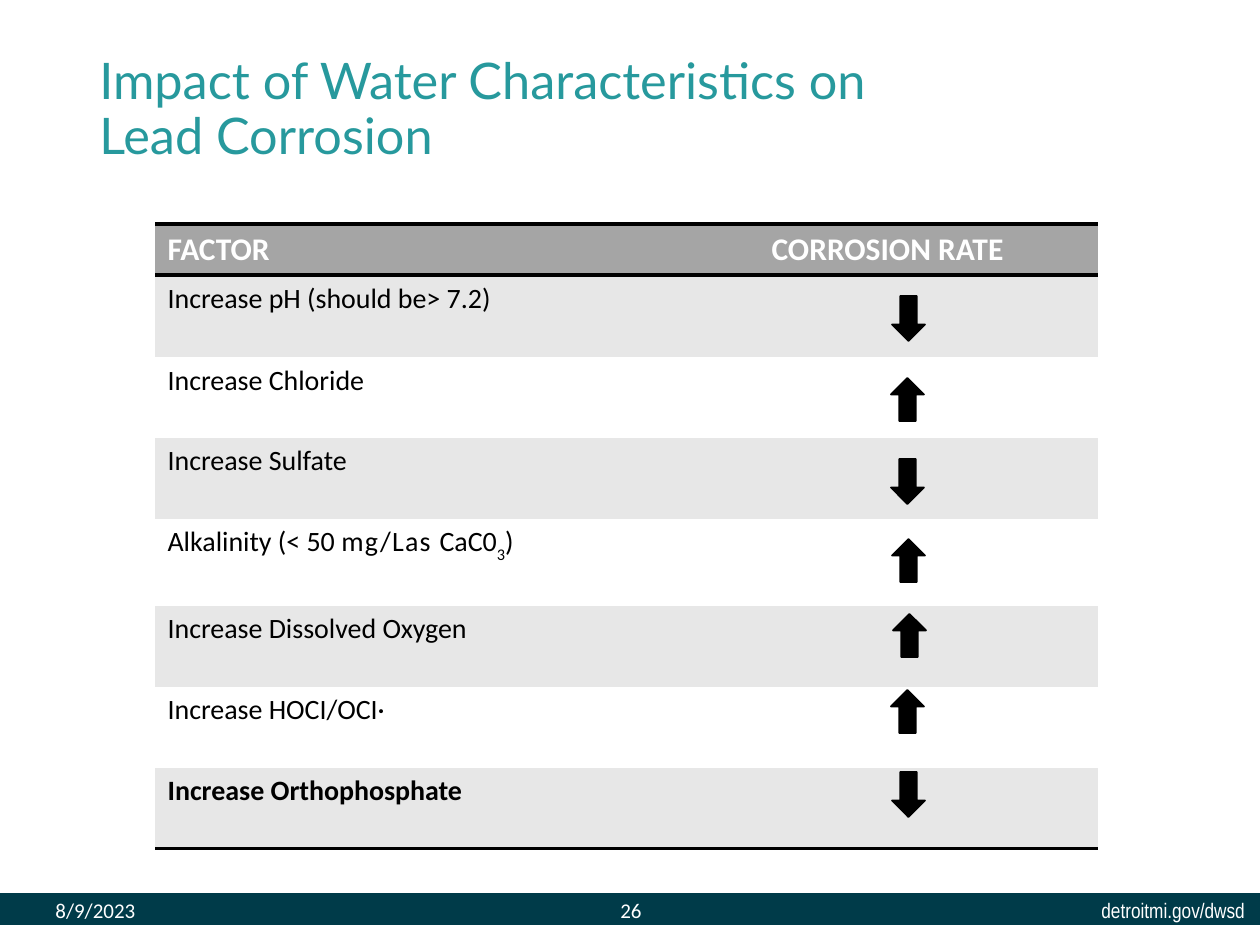
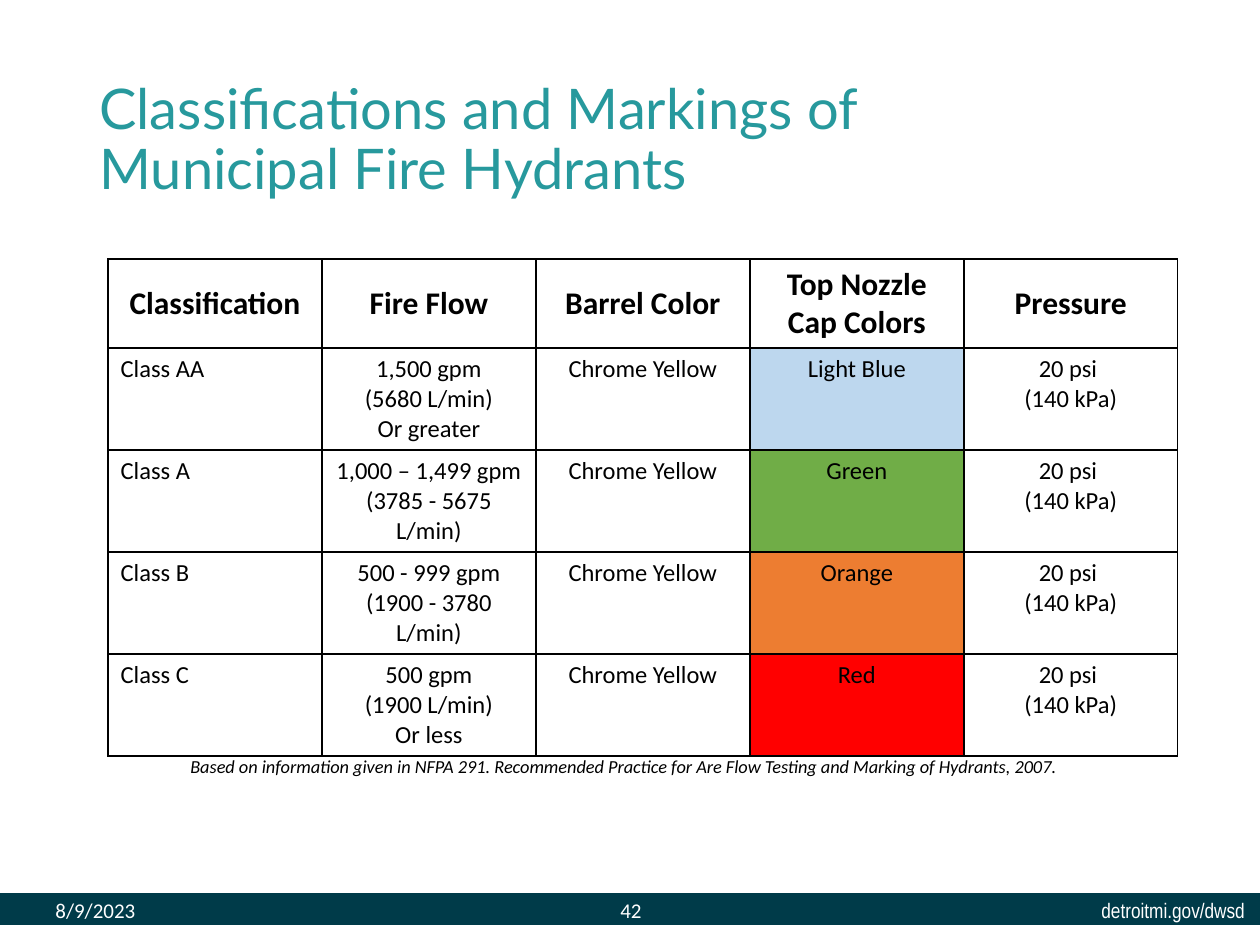
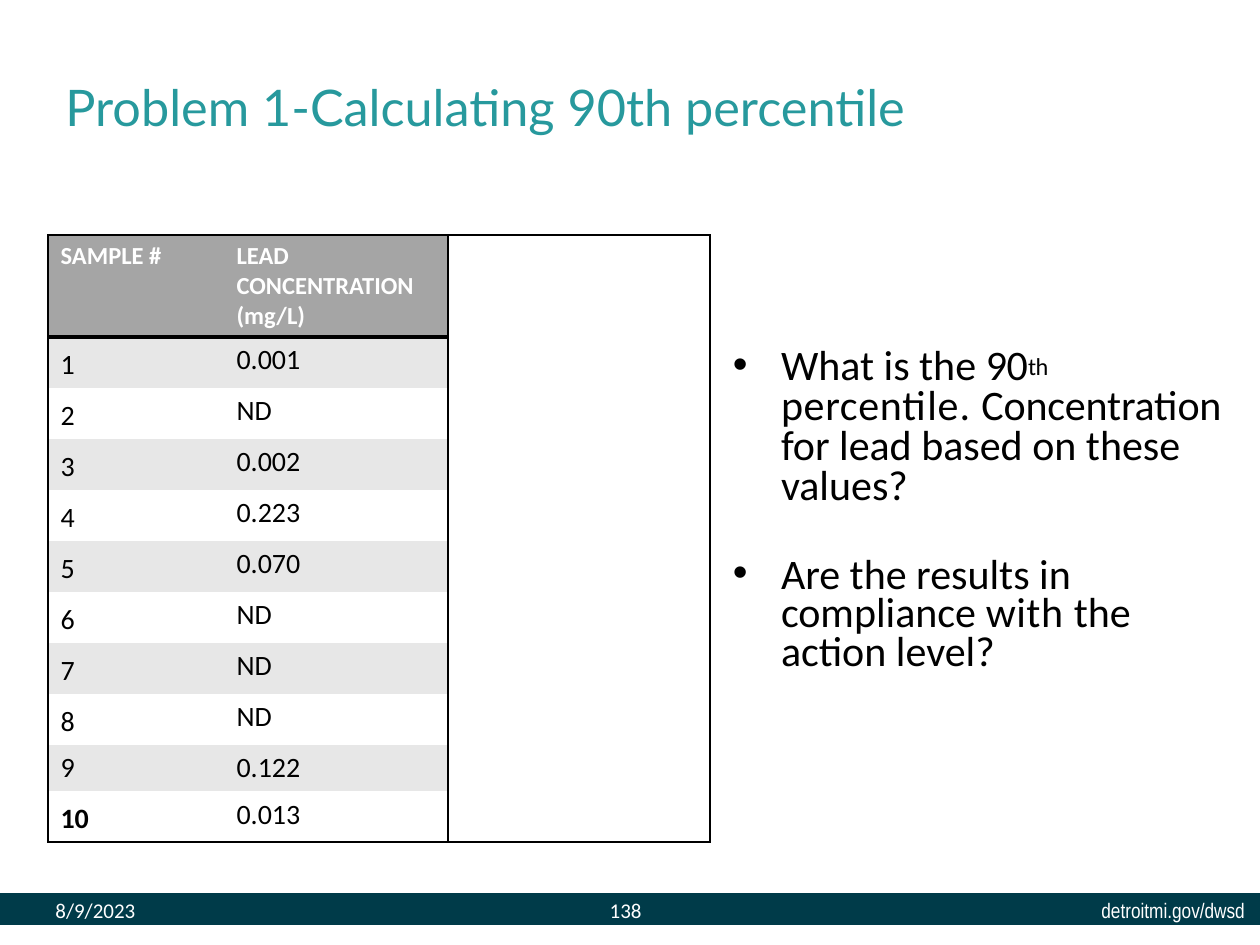
"""Build three water utility training slides with a shared title style and footer."""
import lxml.etree
import pptx
import pptx.dml.color
import pptx.enum.shapes
import pptx.enum.text
import pptx.oxml.ns
import pptx.util

RGB = pptx.dml.color.RGBColor
TEAL = RGB(0x27, 0x99, 0x9D)
NAVY = RGB(0x00, 0x3B, 0x49)
WHITE = RGB(0xFF, 0xFF, 0xFF)
BLACK = RGB(0x00, 0x00, 0x00)
GRAY = RGB(0xA5, 0xA5, 0xA5)
PALE = RGB(0xE7, 0xE7, 0xE7)
BLUE = RGB(0xBD, 0xD7, 0xEE)
GREEN = RGB(0x70, 0xAD, 0x47)
AMBER = RGB(0xED, 0x7D, 0x31)
RED = RGB(0xFF, 0x00, 0x00)

SCALE = 914400 / 126
PLAIN = "{2D5ABB26-0587-4C30-8999-92F81FD0307C}"
SHAPE = pptx.enum.shapes.MSO_SHAPE
TOP = pptx.enum.text.MSO_ANCHOR.TOP
MID = pptx.enum.text.MSO_ANCHOR.MIDDLE
LOW = pptx.enum.text.MSO_ANCHOR.BOTTOM
LEFT = pptx.enum.text.PP_ALIGN.LEFT
MIDST = pptx.enum.text.PP_ALIGN.CENTER
RIGHT = pptx.enum.text.PP_ALIGN.RIGHT

FACTORS = [
    "Increase pH (should be> 7.2)",
    "Increase Chloride",
    "Increase Sulfate",
    ["Alkalinity (< 50 ", ("mg/Las ", 70, 0), "CaC0", ("3", 0, -30000), ")"],
    "Increase Dissolved Oxygen",
    "Increase HOCI/OCI·",
    "Increase Orthophosphate",
]
ARROWS = [
    ("down", 892, 296), ("up", 891, 378), ("down", 891, 459), ("up", 892, 539),
    ("up", 893, 614), ("up", 891, 690), ("down", 892, 772),
]
HEADS = ["Classification", "Fire Flow", "Barrel Color", "Top Nozzle Cap Colors", "Pressure"]
CLASSES = [
    ("Class AA", "1,500 gpm\n(5680 L/min)\nOr greater", "Light Blue", BLUE),
    ("Class A", "1,000 – 1,499 gpm\n(3785 - 5675 L/min)", "Green", GREEN),
    ("Class B", "500 - 999 gpm\n(1900 - 3780 L/min)", "Orange", AMBER),
    ("Class C", "500 gpm\n(1900 L/min)\nOr less", "Red", RED),
]
LEVELS = ["0.001", "ND", "0.002", "0.223", "0.070", "ND", "ND", "ND", "0.122", "0.013"]
ASK = [
    "What is the ", ("90", -20, 0), ("th ", -30, 12000), ("percentile", 40, 0),
    (". ", 50, 0), ("Concentration ", -10, 0), "for lead based on these values?",
]
CHECK = ["Are the results in compliance ", ("with ", 30, 0), "the action level?"]


def px(num):
    """Turn px into EMU."""
    return round(num * SCALE)


def style(par, size, color=BLACK, font="Calibri", bold=False, slant=False):
    """Set the font of a whole paragraph."""
    face = par.font
    face.name, face.size, face.bold, face.italic = font, pptx.util.Pt(size), bold, slant
    face.color.rgb = color


def write(par, parts):
    """Fill a paragraph from text or from parts with tracking and baseline."""
    if isinstance(parts, str):
        par.text = parts
        return
    for part in parts:
        text, track, base = (part, 0, 0) if isinstance(part, str) else part
        run = par.add_run()
        run.text = text
        props = run._r.get_or_add_rPr()
        if track:
            props.set("spc", str(track))
        if base:
            props.set("baseline", str(base))


def label(slide, box, text, size, color=BLACK, font="Calibri", align=LEFT,
          anchor=TOP, space=None, slant=False, wrap=True):
    """Add a text box with one paragraph."""
    frame = slide.shapes.add_textbox(*map(px, box)).text_frame
    frame.word_wrap = wrap
    frame.vertical_anchor = anchor
    par = frame.paragraphs[0]
    par.text = text
    par.alignment = align
    par.line_spacing = space
    style(par, size, color, font, slant=slant)


def title(slide, box, text, size, anchor=TOP):
    """Add the slide title."""
    label(slide, box, text, size, TEAL, "Lato", anchor=anchor, space=0.9)


def shape(slide, kind, box, color):
    """Add a filled preset shape without an outline."""
    item = slide.shapes.add_shape(kind, *map(px, box))
    item.shadow.inherit = False
    item.fill.solid()
    item.fill.fore_color.rgb = color
    item.line.fill.background()
    return item


def arrow(slide, way, left, top):
    """Add a black block arrow pointing up or down."""
    kind, tall = (SHAPE.UP_ARROW, 43) if way == "up" else (SHAPE.DOWN_ARROW, 45)
    item = shape(slide, kind, (left, top, 33, tall), BLACK)
    item.line.color.rgb = BLACK
    item.line.width = pptx.util.Pt(1)


def page(deck, number):
    """Add a blank slide with the footer band."""
    slide = deck.slides.add_slide(deck.slide_layouts[6])
    shape(slide, SHAPE.RECTANGLE, (0, 893, 1260, 32), NAVY)
    label(slide, (1089, 891, 170, 38), "detroitmi.gov/dwsd", 12, WHITE, "Arial Narrow", wrap=False)
    label(slide, (43, 885, 284, 50), "8/9/2023", 12, WHITE, anchor=MID)
    label(slide, (370, 885, 284, 50), number, 12, WHITE, align=RIGHT, anchor=MID)
    return slide


def grid(slide, left, top, cols, rows):
    """Add an unstyled table with the given column widths and row heights."""
    frame = slide.shapes.add_table(
        len(rows), len(cols), px(left), px(top), px(sum(cols)), px(sum(rows)))
    table = frame.table
    table.first_row = table.horz_banding = False
    table._tbl.tblPr.find(pptx.oxml.ns.qn("a:tableStyleId")).text = PLAIN
    for col, wide in zip(table.columns, cols):
        col.width = px(wide)
    for row, tall in zip(table.rows, rows):
        row.height = px(tall)
    return table


def edge(cell, sides):
    """Draw black borders from a map of side letter to points."""
    props = cell._tc.get_or_add_tcPr()
    for side in "LRTB":
        if side in sides:
            line = lxml.etree.SubElement(props, pptx.oxml.ns.qn("a:ln" + side))
            line.set("w", str(pptx.util.Pt(sides[side])))
            paint = lxml.etree.SubElement(line, pptx.oxml.ns.qn("a:solidFill"))
            tint = lxml.etree.SubElement(paint, pptx.oxml.ns.qn("a:srgbClr"))
            tint.set("val", str(BLACK))


def put(cell, text="", size=16, color=BLACK, back=None, sides={}, align=LEFT,
        anchor=TOP, bold=False):
    """Set a table cell's borders, fill and text."""
    edge(cell, sides)
    if back is None:
        cell.fill.background()
    else:
        cell.fill.solid()
        cell.fill.fore_color.rgb = back
    cell.vertical_anchor = anchor
    if not text:
        cell.margin_top = cell.margin_bottom = 0
        return
    lines = text.split("\n") if isinstance(text, str) else [text]
    frame = cell.text_frame
    for pos, line in enumerate(lines):
        par = frame.add_paragraph() if pos else frame.paragraphs[0]
        write(par, line)
        par.alignment = align
        style(par, size, color, bold=bold)


def bullet(par, parts, space, before=0):
    """Fill a bulleted paragraph with a hanging indent."""
    props = par._p.get_or_add_pPr()
    props.set("marL", str(px(54)))
    props.set("indent", str(px(-48)))
    font = lxml.etree.SubElement(props, pptx.oxml.ns.qn("a:buFont"))
    font.set("typeface", "Arial")
    mark = lxml.etree.SubElement(props, pptx.oxml.ns.qn("a:buChar"))
    mark.set("char", "•")
    par.line_spacing = space
    if before:
        par.space_before = pptx.util.Pt(before)
    write(par, parts)
    style(par, 24)


def factors(deck):
    """Build the corrosion factor slide."""
    slide = page(deck, "26")
    title(slide, (87, 50, 1086, 183), "Impact of Water Characteristics on\vLead Corrosion", 28.8)
    table = grid(slide, 155, 224, [604, 339], [51, 82, 81, 81, 87, 81, 81, 81])
    for col, head in enumerate(["FACTOR", "CORROSION RATE"]):
        put(table.cell(0, col), head, 18, WHITE, GRAY, {"T": 2, "B": 2}, bold=True)
    for row, text in enumerate(FACTORS, 1):
        last = row == len(FACTORS)
        back = PALE if row % 2 else WHITE
        sides = {"B": 2} if last else {}
        put(table.cell(row, 0), text, back=back, sides=sides, bold=last)
        put(table.cell(row, 1), back=back, sides=sides)
    for way, left, top in ARROWS:
        arrow(slide, way, left, top)


def hydrants(deck):
    """Build the hydrant classification slide."""
    slide = page(deck, "42")
    title(slide, (87, 50, 809, 183),
          "Classifications and Markings of Municipal Fire Hydrants", 32, MID)
    label(slide, (178, 751, 934, 81),
          "Based on information given in NFPA 291. Recommended Practice for Are Flow "
          "Testing and Marking of Hydrants, 2007.", 10.5, space=0.9, slant=True)
    table = grid(slide, 108, 259, [214] * 5, [89] + [102] * 4)
    box = dict.fromkeys("LRTB", 1)
    for col, head in enumerate(HEADS):
        put(table.cell(0, col), head, 18, sides=box, align=MIDST, anchor=MID, bold=True)
    for row, (name, flow, cap, tint) in enumerate(CLASSES, 1):
        texts = [name, flow, "Chrome Yellow", cap, "20 psi \n(140 kPa)"]
        for col, text in enumerate(texts):
            put(table.cell(row, col), text, 14, sides=box,
                back=tint if col == 3 else None, align=MIDST if col else LEFT)


def samples(deck):
    """Build the percentile problem slide."""
    slide = page(deck, "138")
    title(slide, (53, 77, 1086, 183), "Problem 1-Calculating 90th percentile", 28.8)
    frame = slide.shapes.add_textbox(*map(px, (727, 341, 509, 338))).text_frame
    frame.word_wrap = True
    frame.margin_left = frame.margin_right = frame.margin_bottom = 0
    frame.margin_top = px(8)
    bullet(frame.paragraphs[0], ASK, 0.79)
    bullet(frame.add_paragraph(), CHECK, 0.77, 28.5)

    table = grid(slide, 48, 235, [176, 224, 262], [102] + [51] * 8 + [46, 51])
    put(table.cell(0, 0), "SAMPLE #", 14, WHITE, GRAY, {"L": 1, "T": 1, "B": 2}, bold=True)
    put(table.cell(0, 1), "LEAD CONCENTRATION (mg/L)", 14, WHITE, GRAY,
        {"R": 1, "T": 1, "B": 2}, bold=True)
    put(table.cell(0, 2), sides={"L": 1, "R": 1, "T": 1})
    for row, level in enumerate(LEVELS, 1):
        last = row == len(LEVELS)
        back = PALE if row % 2 else WHITE
        base = {"B": 1} if last else {}
        put(table.cell(row, 0), str(row), back=back, sides={"L": 1, **base},
            anchor=LOW, bold=last)
        put(table.cell(row, 1), level, back=back, sides={"R": 1, **base})
        put(table.cell(row, 2), sides={"L": 1, "R": 1, **base})


def main():
    """Build and save the deck."""
    deck = pptx.Presentation()
    deck.slide_width, deck.slide_height = px(1260), px(945)
    factors(deck)
    hydrants(deck)
    samples(deck)
    deck.save("out.pptx")


if __name__ == "__main__":
    main()
